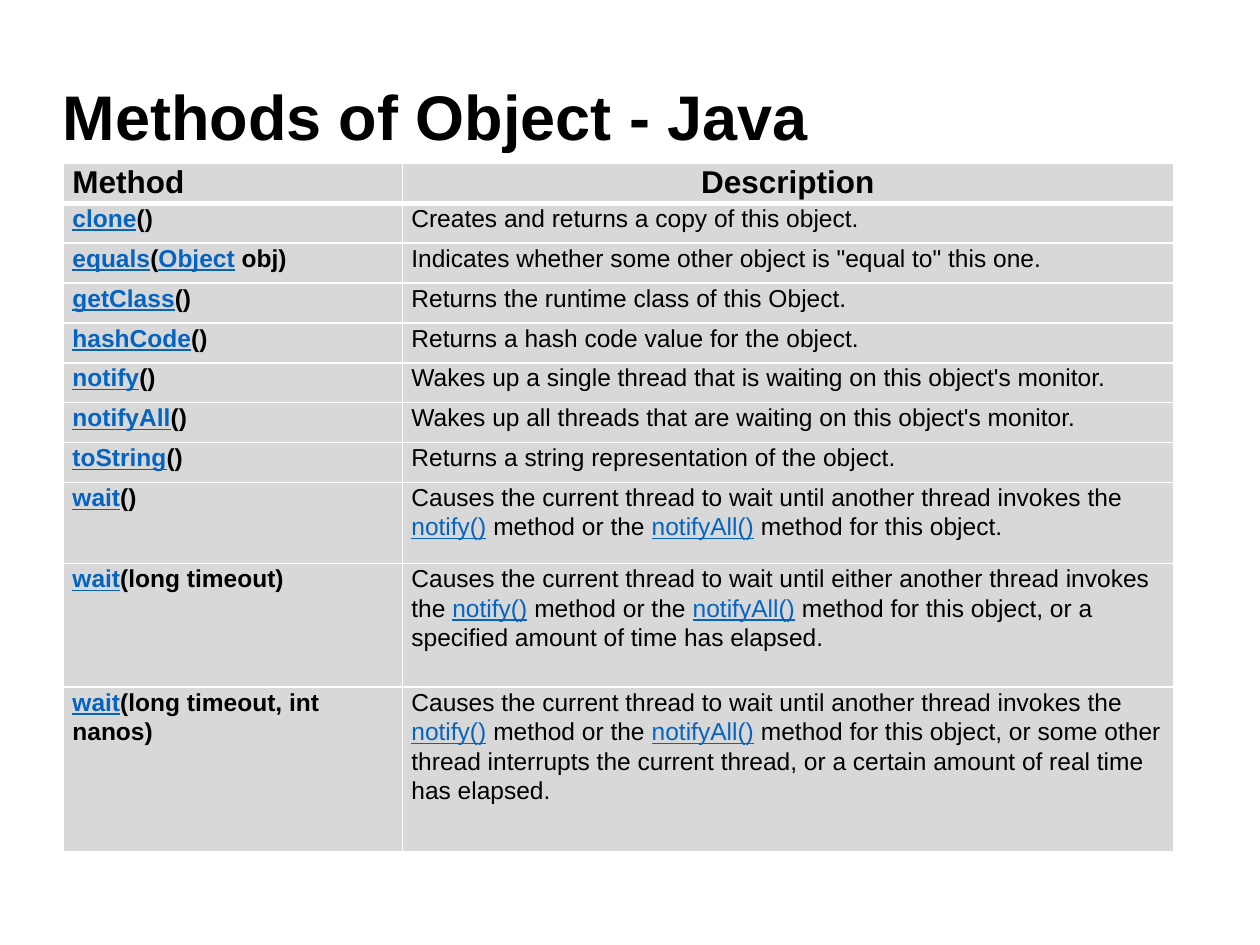
import lxml.etree
import pptx
import pptx.dml.color
import pptx.enum.text
import pptx.oxml.ns
import pptx.util

Pt = pptx.util.Pt
Anchor = pptx.enum.text.MSO_ANCHOR
Align = pptx.enum.text.PP_ALIGN

# Content: every second piece between bars is a link
TITLE = "Methods of Object - Java"
HEADINGS = ("Method", "Description")
NOTIFIERS = "|notify()| method or the |notifyAll()| method for this object"
UNTIL = "Causes the current thread to wait until "
METHODS = [
    ("|clone|()", "Creates and returns a copy of this object."),
    ("|equals|(|Object| obj)", 'Indicates whether some other object is "equal to" this one.'),
    ("|getClass|()", "Returns the runtime class of this Object."),
    ("|hashCode|()", "Returns a hash code value for the object."),
    ("|notify|()", "Wakes up a single thread that is waiting on this object's monitor."),
    ("|notifyAll|()", "Wakes up all threads that are waiting on this object's monitor."),
    ("|toString|()", "Returns a string representation of the object."),
    ("|wait|()", f"{UNTIL}another thread invokes the {NOTIFIERS}."),
    ("|wait|(long timeout)",
     f"{UNTIL}either another thread invokes the {NOTIFIERS}, "
     "or a specified amount of time has elapsed."),
    ("|wait|(long timeout, int nanos)",
     f"{UNTIL}another thread invokes the {NOTIFIERS}, or some other thread interrupts "
     "the current thread, or a certain amount of real time has elapsed."),
]

# Format values
BLACK, LINK, GREY, WHITE = "000000", "0563C1", "D8D8D8", "FFFFFF"
COLUMN_WIDTHS = (193.7, 440.6)
ROW_HEIGHTS = [22.8] * 8 + [46.4, 70.6, 94]
TABLE_LEFT, TABLE_TOP = 36.2, 93
THIN, THICK = 1, 3
TITLE_FRAME = {"word_wrap": True, "vertical_anchor": Anchor.MIDDLE,
               "margin_left": Pt(7.2), "margin_right": Pt(7.2),
               "margin_top": Pt(0), "margin_bottom": Pt(3.6)}
CELL_FORMAT = {"vertical_anchor": Anchor.TOP,
               "margin_left": Pt(5.2), "margin_right": Pt(5.2),
               "margin_top": Pt(0), "margin_bottom": Pt(0)}


def color(value):
    return pptx.dml.color.RGBColor.from_string(value)


def set_attributes(target, values):
    for name, value in values.items():
        setattr(target, name, value)


def write(paragraph, text, size, bold, spacing, alignment=Align.LEFT):
    set_attributes(paragraph, {"line_spacing": spacing, "alignment": alignment})
    for index, piece in enumerate(text.split("|")):
        if not piece:
            continue
        is_link = index % 2 == 1
        run = paragraph.add_run()
        run.text = piece
        set_attributes(run.font, {"name": "Arial", "size": Pt(size), "bold": bold,
                                  "underline": is_link})
        run.font.color.rgb = color(LINK if is_link else BLACK)


def add_borders(cell, widths):
    properties = cell._tc.get_or_add_tcPr()
    for side, width in widths.items():
        line = lxml.etree.SubElement(properties, pptx.oxml.ns.qn(f"a:ln{side}"), w=str(Pt(width)))
        fill = lxml.etree.SubElement(line, pptx.oxml.ns.qn("a:solidFill"))
        lxml.etree.SubElement(fill, pptx.oxml.ns.qn("a:srgbClr"), val=WHITE)


def add_title(slide):
    box = slide.shapes.add_textbox(Pt(28.8), Pt(40.3), Pt(663), Pt(60.5))
    set_attributes(box.text_frame, TITLE_FRAME)
    write(box.text_frame.paragraphs[0], TITLE, 36, True, 0.9)


def add_method_table(slide):
    rows = [HEADINGS] + METHODS
    table = slide.shapes.add_table(
        len(rows), len(HEADINGS), Pt(TABLE_LEFT), Pt(TABLE_TOP),
        Pt(sum(COLUMN_WIDTHS)), Pt(sum(ROW_HEIGHTS))).table
    for column, width in zip(table.columns, COLUMN_WIDTHS):
        column.width = Pt(width)
    for row_index, (texts, height) in enumerate(zip(rows, ROW_HEIGHTS)):
        table.rows[row_index].height = Pt(height)
        is_header = row_index == 0
        borders = {"L": THIN, "R": THIN,
                   "T": THICK if row_index == 1 else THIN,
                   "B": THICK if is_header else THIN}
        for column_index, text in enumerate(texts):
            cell = table.cell(row_index, column_index)
            set_attributes(cell, CELL_FORMAT)
            add_borders(cell, borders)
            cell.fill.solid()
            cell.fill.fore_color.rgb = color(GREY)
            centred = is_header and column_index == 1
            write(cell.text_frame.paragraphs[0], text, 18 if is_header else 14,
                  is_header or column_index == 0, 1.07,
                  Align.CENTER if centred else Align.LEFT)


def main():
    presentation = pptx.Presentation()
    set_attributes(presentation, {"slide_width": Pt(720), "slide_height": Pt(540)})
    slide = presentation.slides.add_slide(presentation.slide_layouts[6])
    add_title(slide)
    add_method_table(slide)
    presentation.save("out.pptx")


if __name__ == "__main__":
    main()
